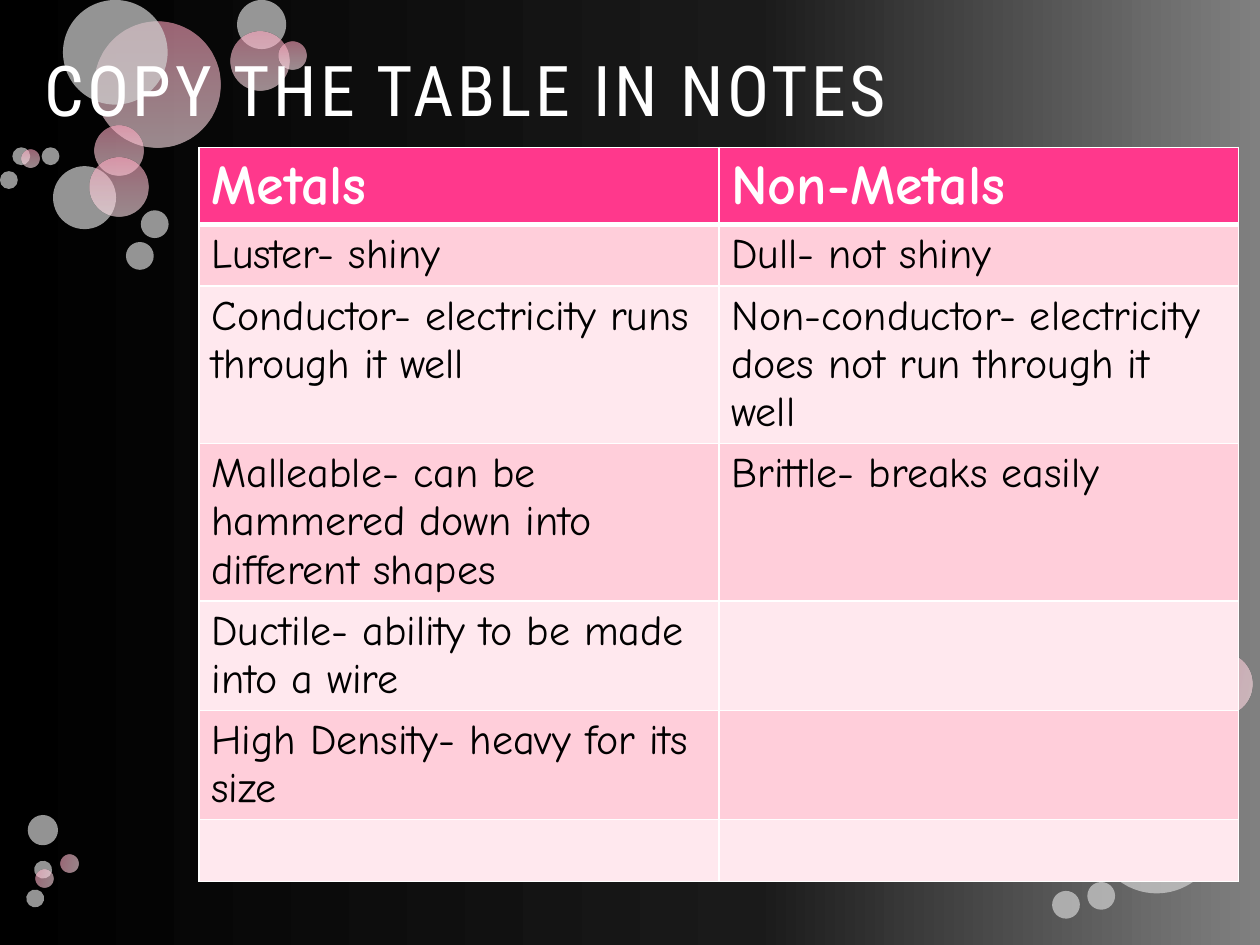
from lxml.etree import SubElement
from pptx import Presentation
from pptx.dml.color import RGBColor
from pptx.enum.shapes import MSO_SHAPE
from pptx.enum.text import MSO_ANCHOR, PP_ALIGN
from pptx.oxml.ns import qn
from pptx.util import Cm, Pt

COLORS = {
    "white": "FFFFFF", "text": "000000", "header": "FF388C",
    "band_dark": "FFCEDA", "band_light": "FFE8EE", "grey": "D2D2D2",
}
# Stops are position in %, colour, opacity in %
BACKGROUND_STOPS = [(0, "000000", 100), (60, "1A1A1A", 100), (100, "808080", 100)]
BUBBLE_STOPS = {
    "pink": [(0, "FFA4BE", 60), (50, "FFC7D6", 60), (100, "FFE4EA", 60)],
    "grey": [(0, COLORS["grey"], 70), (100, COLORS["grey"], 70)],
}
TITLE = "COPY THE TABLE IN NOTES"
ROWS = [
    ("Metals", "Non-Metals"),
    ("Luster- shiny", "Dull- not shiny"),
    ("Conductor- electricity runs through it well",
     "Non-conductor- electricity does not run through it well"),
    ("Malleable- can be hammered down into different shapes", "Brittle- breaks easily"),
    ("Ductile- ability to be made into a wire", ""),
    ("High Density- heavy for its size", ""),
    ("", ""),
]
ROW_HEIGHTS = [1.19, 1.24, 3.12, 3.12, 2.16, 2.16, 1.24]
COLUMN_WIDTH = 10.48

# Left, top, diameter in cm, from back to front
UPPER_BUBBLES = [
    ("pink", 1.91, 0.43, 2.54), ("grey", 1.07, 3.35, 1.27),
    ("pink", 1.91, 2.54, 0.99), ("pink", 1.8, 3.18, 1.19),
    ("grey", 1.27, 0, 2.11), ("grey", 4.78, 0, 0.99),
    ("pink", 4.65, 0.64, 1.19), ("pink", 5.61, 0.84, 0.56),
    ("grey", 2.84, 4.24, 0.56), ("grey", 0.25, 2.97, 0.36),
    ("grey", 2.54, 4.88, 0.56), ("grey", 0, 3.45, 0.36),
    ("pink", 0.43, 3.02, 0.36), ("grey", 0.84, 2.97, 0.36),
]
LOWER_BUBBLES = [
    ("grey", 22.05, 15.47, 2.54), ("pink", 23.98, 13.16, 1.27),
    ("grey", 0.56, 16.43, 0.61), ("grey", 21.21, 17.96, 0.56),
    ("grey", 21.92, 17.78, 0.56), ("grey", 0.69, 17.35, 0.36),
    ("pink", 1.22, 17.22, 0.36), ("pink", 0.71, 17.53, 0.36),
    ("grey", 0.53, 17.93, 0.36),
]


def color(name):
    return RGBColor.from_string(COLORS[name])


def add_color(parent, hex_color, opacity=100):
    node = SubElement(parent, qn("a:srgbClr"), val=hex_color)
    if opacity < 100:
        SubElement(node, qn("a:alpha"), val=str(opacity * 1000))


def paint(fill, properties, stops, angle):
    """Fill with a gradient, or with one translucent colour if all stops agree."""
    fill.solid()
    solid = properties.find(qn("a:solidFill"))
    if len({stop[1] for stop in stops}) == 1:
        add_color(solid, *stops[0][1:])
        return
    gradient = properties.makeelement(qn("a:gradFill"), {"rotWithShape": "1"})
    properties.replace(solid, gradient)
    stop_list = SubElement(gradient, qn("a:gsLst"))
    for position, hex_color, opacity in stops:
        stop = SubElement(stop_list, qn("a:gs"), pos=str(position * 1000))
        add_color(stop, hex_color, opacity)
    SubElement(gradient, qn("a:lin"), ang=str(angle * 60000), scaled="0")


def add_bubbles(page, bubbles, turned=False):
    for kind, left, top, size in bubbles:
        bubble = page.shapes.add_shape(
            MSO_SHAPE.OVAL, Cm(left), Cm(top), Cm(size), Cm(size))
        bubble.shadow.inherit = False
        bubble.line.fill.background()
        properties = bubble._element.spPr
        paint(bubble.fill, properties, BUBBLE_STOPS[kind], 90)
        if turned:
            bubble.rotation = 103.3
            properties.find(qn("a:xfrm")).set("flipV", "1")


def style_title(page):
    title = page.shapes.title
    title.left, title.top, title.width, title.height = Cm(0.64), Cm(0.2), Cm(18.42), Cm(3.18)
    frame = title.text_frame
    frame.text = TITLE
    frame.vertical_anchor = MSO_ANCHOR.MIDDLE
    frame.paragraphs[0].alignment = PP_ALIGN.LEFT
    span = frame.paragraphs[0].runs[0]
    span.font.name, span.font.size = "Roboto Condensed", Pt(40)
    span.font.color.rgb = color("white")
    span.font._element.set("spc", "200")
    page.shapes._spTree.append(title._element)  # in front of the bubbles


def add_borders(cell, is_header):
    properties = cell._tc.get_or_add_tcPr()
    for side in "LRTB":
        width = Pt(3) if is_header and side == "B" else Pt(1)
        line = SubElement(properties, qn(f"a:ln{side}"), w=str(width))
        add_color(SubElement(line, qn("a:solidFill")), COLORS["white"])


def add_notes_table(page):
    table = page.shapes.add_table(
        len(ROWS), 2, Cm(4.01), Cm(2.97), Cm(2 * COLUMN_WIDTH), Cm(sum(ROW_HEIGHTS))).table
    for column in table.columns:
        column.width = Cm(COLUMN_WIDTH)
    for index, (texts, height) in enumerate(zip(ROWS, ROW_HEIGHTS)):
        table.rows[index].height = Cm(height)
        is_header = index == 0
        band = "header" if is_header else "band_dark" if index % 2 else "band_light"
        for cell, text in zip(table.rows[index].cells, texts):
            add_borders(cell, is_header)
            cell.fill.solid()
            cell.fill.fore_color.rgb = color(band)
            cell.text_frame.text = text
            for span in cell.text_frame.paragraphs[0].runs:
                span.font.name = "Comic Neue"
                span.font.size = Pt(32 if is_header else 24)
                span.font.bold = is_header
                span.font.color.rgb = color("white" if is_header else "text")


def main():
    deck = Presentation()
    deck.slide_width, deck.slide_height = Cm(25.4), Cm(19.05)
    page = deck.slides.add_slide(deck.slide_layouts[5])
    background = page.background.fill
    background.solid()
    paint(background, page._element.cSld.bg.bgPr, BACKGROUND_STOPS, 0)
    add_bubbles(page, UPPER_BUBBLES)
    add_bubbles(page, LOWER_BUBBLES, turned=True)
    style_title(page)
    add_notes_table(page)
    deck.save("out.pptx")


if __name__ == "__main__":
    main()
